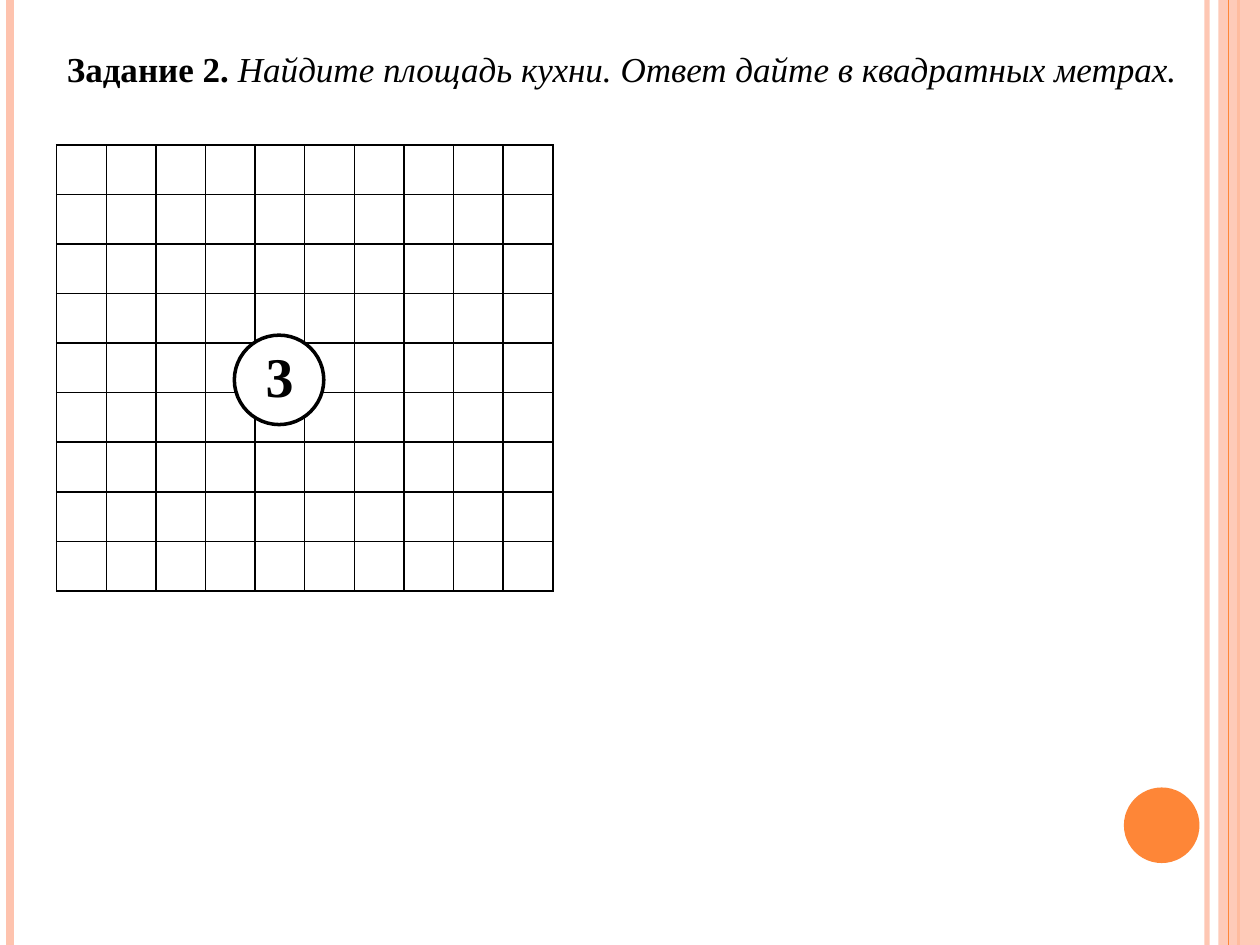
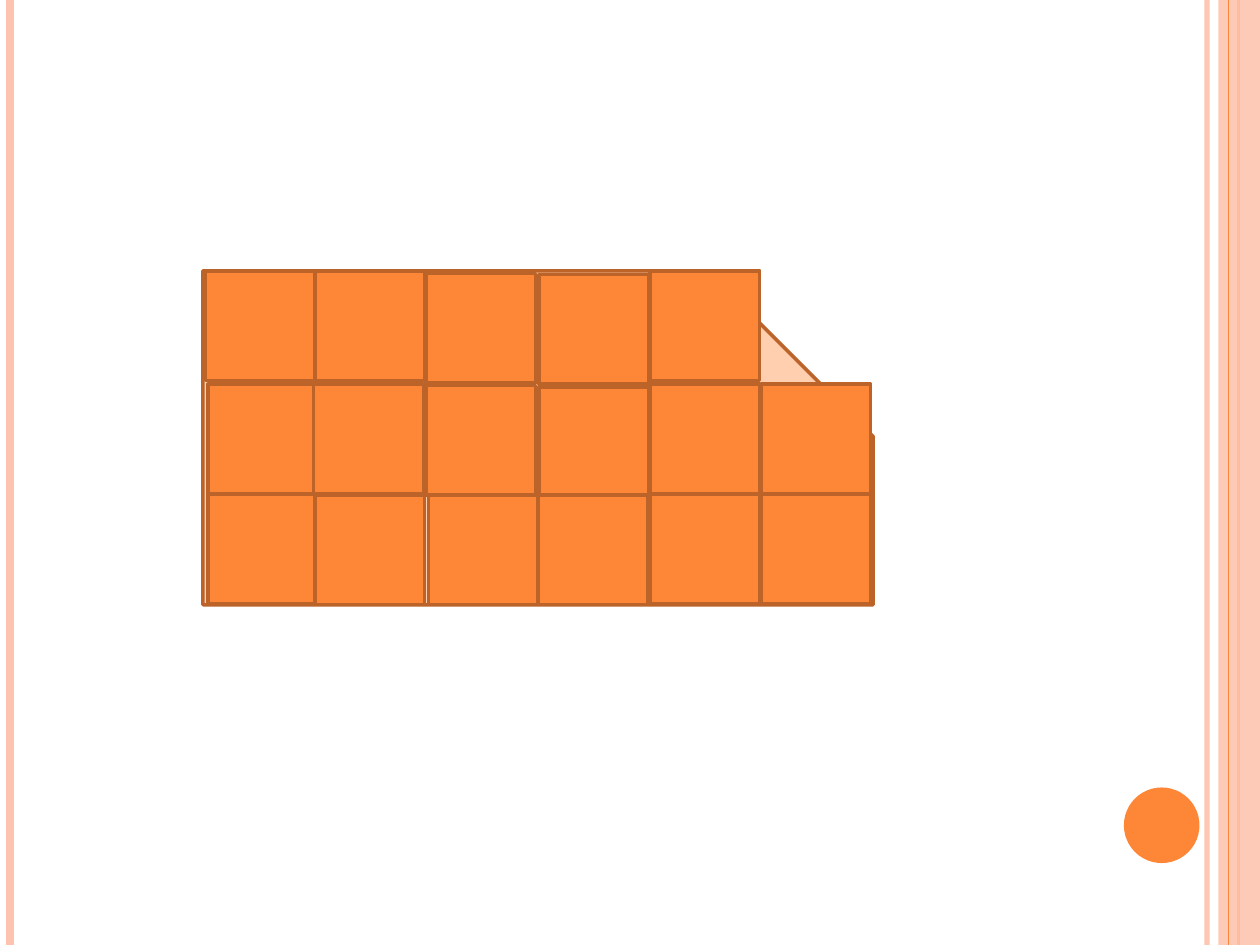
from lxml import etree
from pptx import Presentation
from pptx.dml.color import RGBColor
from pptx.enum import shapes, text
from pptx.oxml import parse_xml
from pptx.oxml.ns import nsdecls, qn
from pptx.util import Inches, Pt

# Shared look
PINK, ORANGE, PEACH, BROWN = "FEC3AE", "FE8637", "FFCFAF", "BC6329"
BLACK, WHITE = "000000", "FFFFFF"
FONT = "Times New Roman"
SHAPE = shapes.MSO_SHAPE


def color(code):
    return RGBColor.from_string(code)


def set_alpha(shape, percent):
    tone = shape.element.spPr.find(".//" + qn("a:srgbClr"))
    etree.SubElement(tone, qn("a:alpha")).set("val", str(percent * 1000))


def add_shape(page, kind, box, fill, line=None, width=2):
    shape = page.shapes.add_shape(kind, *map(Inches, box))
    shape.shadow.inherit = False
    shape.fill.solid()
    shape.fill.fore_color.rgb = color(fill)
    if line:
        shape.line.color.rgb = color(line)
        shape.line.width = Pt(width)
    else:
        shape.line.fill.background()
    return shape


def add_stripe(page, left, code, width):
    x = Inches(left)
    stripe = page.shapes.add_connector(
        shapes.MSO_CONNECTOR.STRAIGHT, x, 0, x, Inches(7.5))
    stripe.line.color.rgb = color(code)
    stripe.line.width = Pt(width)
    etree.SubElement(stripe.element.spPr, qn("a:effectLst"))
    return stripe


def add_span(para, words, size=20, bold=False, italic=False, code=BLACK):
    span = para.add_run()
    span.text = words
    span.font.name = FONT
    span.font.size = Pt(size)
    span.font.bold = bold
    span.font.italic = italic
    span.font.color.rgb = color(code)


def place(shape, box):
    shape.left, shape.top, shape.width, shape.height = map(Inches, box)


def decorate_master(deck, page):
    """Draw the side bands and the disc, then move them to the master."""
    right_edge = add_stripe(page, 9.58, PINK, 3)
    set_alpha(right_edge, 93)
    left_edge = add_stripe(page, 0.08, PINK, 4.5)
    inner = add_stripe(page, 9.83, ORANGE, 1.5)
    band = add_shape(page, SHAPE.RECTANGLE, (9.67, 0, 0.33, 7.5), PINK)
    set_alpha(band, 87)
    outer = add_stripe(page, 9.75, ORANGE, 0.75)
    disc = add_shape(page, SHAPE.OVAL, (8.92, 6.25, 0.6, 0.6), ORANGE)
    parts = (right_edge, left_edge, inner, band, outer, disc)
    for number, part in enumerate(parts, start=101):
        part.element.xpath(".//p:cNvPr")[0].set("id", str(number))
        deck.slide_master.shapes.element.append(part.element)


def add_title(page, box, task, question):
    title = page.shapes.title
    place(title, box)
    frame = title.text_frame
    frame.word_wrap = False
    frame.auto_size = text.MSO_AUTO_SIZE.NONE
    frame.vertical_anchor = text.MSO_ANCHOR.TOP
    para = frame.paragraphs[0]
    para.alignment = text.PP_ALIGN.LEFT
    add_span(para, task, bold=True)
    add_span(para, question, italic=True)


def add_borders(cell, code, width):
    properties = cell._tc.get_or_add_tcPr()
    for index, side in enumerate(("lnL", "lnR", "lnT", "lnB")):
        properties.insert(index, parse_xml(
            f'<a:{side} {nsdecls("a")} w="{Pt(width)}"><a:solidFill>'
            f'<a:srgbClr val="{code}"/></a:solidFill></a:{side}>'))


def add_grid(page, box, rows, columns):
    """Squared paper as an empty table."""
    table = page.shapes.add_table(rows, columns, *map(Inches, box)).table
    table.first_row = table.horz_banding = False
    for cell in table.iter_cells():
        cell.margin_top = cell.margin_bottom = 0
        cell.fill.background()
        add_borders(cell, BLACK, 1)


def add_badge(page, box, number):
    left, top, size, _ = box
    add_shape(page, SHAPE.OVAL, box, WHITE, BLACK)
    label = page.shapes.add_textbox(
        *map(Inches, (left + 0.15, top, size - 0.16, size - 0.07)))
    label.text_frame.word_wrap = True
    add_span(label.text_frame.paragraphs[0], number, size=32, bold=True)


# Tile offsets inside the room, column by column: (lefts, tops)
TILE = 0.87
TILE_COLUMNS = [
    ((0.02, 0.04, 0.04), (0, 0.9, 1.77)),
    ((0.89, 0.88, 0.89), (0, 0.9, 1.78)),
    ((1.77, 1.77, 1.79), (0.02, 0.91, 1.78)),
    ((2.67, 2.67, 2.66), (0.03, 0.92, 1.78)),
    ((3.55, 3.55, 3.55), (0, 0.9, 1.77)),
    ((4.43, 4.43), (0.9, 1.77)),
]


def add_tiled_room(page, box):
    room = add_shape(page, SHAPE.SNIP_1_RECTANGLE, box, PEACH, BROWN)
    room.adjustments[0] = 0.496
    left, top = box[:2]
    for lefts, tops in TILE_COLUMNS:
        for x, y in zip(lefts, tops):
            add_shape(page, SHAPE.RECTANGLE,
                      (left + x, top + y, TILE, TILE), ORANGE, BROWN)


def main():
    deck = Presentation()
    deck.slide_width, deck.slide_height = Inches(10), Inches(7.5)
    title_only, blank = deck.slide_layouts[5], deck.slide_layouts[6]

    # Task with squared paper
    task_page = deck.slides.add_slide(title_only)
    decorate_master(deck, task_page)
    add_title(task_page, (0.43, 0.33, 9.09, 0.44), "Задание 2. ",
              "Найдите площадь кухни. Ответ дайте в квадратных метрах.")
    add_grid(task_page, (0.45, 1.15, 3.94, 3.54), rows=9, columns=10)
    add_badge(task_page, (1.86, 2.66, 0.71, 0.71), "3")

    # Kitchen floor covered with square tiles
    floor_page = deck.slides.add_slide(blank)
    add_tiled_room(floor_page, (1.61, 2.15, 5.32, 2.65))

    deck.save("out.pptx")


if __name__ == "__main__":
    main()
